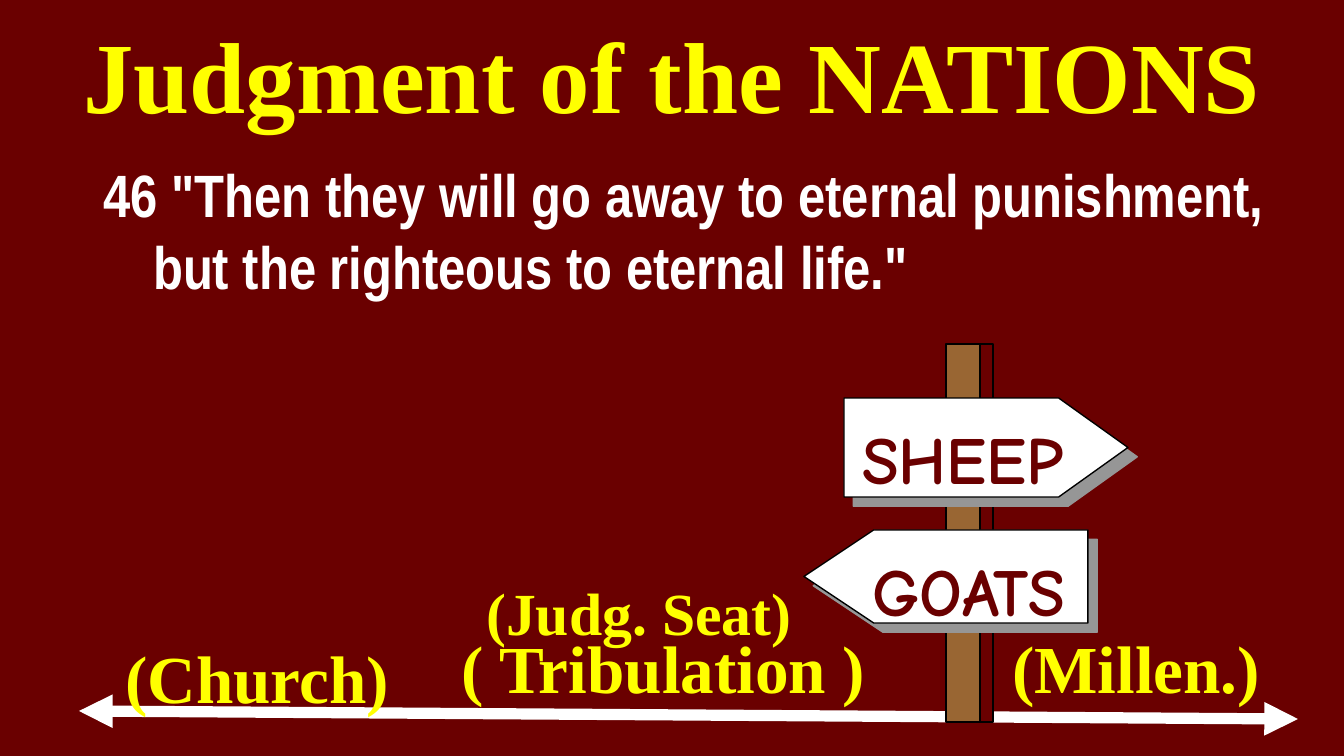
"""Builds the Judgment of the Nations slide."""
from lxml import etree
from pptx import Presentation, util as u
from pptx.dml import color
from pptx.enum import shapes, text
from pptx.oxml import ns

SCALE = 6804
COLORS = {"back": "6A0000", "title": "FFFF00", "white": "FFFFFF",
          "post": "996633", "edge": "000000", "shadow": "969696"}
SERIF, NARROW, COMIC = "Times New Roman", "Arial Narrow", "Comic Neue"


def px(n):
    return u.Emu(n * SCALE)


def rgb(name):
    return color.RGBColor.from_string(COLORS[name])


def add(parent, tag, **attrs):
    return etree.SubElement(parent, ns.qn(tag), attrs)


class Deck:
    def __init__(self, width, height):
        self.prs = Presentation()
        self.prs.slide_width, self.prs.slide_height = px(width), px(height)
        self.s = self.prs.slides.add_slide(self.prs.slide_layouts[6])
        fill = self.s.background.fill
        fill.solid()
        fill.fore_color.rgb = rgb("back")

    def label(self, words, box, size, name=SERIF, ink="title", align="LEFT",
              anchor="TOP", wrap=True, hang=0):
        tf = self.s.shapes.add_textbox(*map(px, box)).text_frame
        frame = {"word_wrap": wrap, "vertical_anchor": getattr(text.MSO_ANCHOR, anchor)}
        for key, value in frame.items():
            setattr(tf, key, value)
        p = tf.paragraphs[0]
        p.alignment = getattr(text.PP_ALIGN, align)
        if hang:
            pPr = p._p.get_or_add_pPr()
            pPr.set("marL", str(px(hang)))
            pPr.set("indent", str(-px(hang)))
        r = p.add_run()
        r.text = words
        for key, value in {"name": name, "size": u.Pt(size), "bold": True}.items():
            setattr(r.font, key, value)
        r.font.color.rgb = rgb(ink)

    def shape(self, kind, box, fill):
        sp = self.s.shapes.add_shape(kind, *map(px, box))
        sp.shadow.inherit = False
        sp.fill.solid()
        sp.fill.fore_color.rgb = rgb(fill)
        sp.line.color.rgb = rgb("edge")
        sp.line.width = u.Pt(0.75)
        return sp

    def sign(self, box, point, left=False):
        sp = self.shape(shapes.MSO_SHAPE.PENTAGON, box, "white")
        sp.adjustments[0] = point
        spPr = sp._element.spPr
        if left:
            spPr.find(ns.qn("a:xfrm")).set("flipH", "1")
        shadow = add(spPr.find(ns.qn("a:effectLst")), "a:outerShdw",
                     dist=str(u.Pt(7.1)), dir="2700000", algn="ctr", rotWithShape="0")
        add(shadow, "a:srgbClr", val=COLORS["shadow"])

    def arrow(self, x1, y1, x2, y2, width):
        sp = self.s.shapes.add_connector(shapes.MSO_CONNECTOR.STRAIGHT,
                                         *map(px, (x1, y1, x2, y2)))
        sp.line.color.rgb = rgb("white")
        sp.line.width = u.Pt(width)
        for end in ("a:headEnd", "a:tailEnd"):
            add(sp.line._ln, end, type="triangle")
        add(sp._element.spPr, "a:effectLst")


def main():
    deck = Deck(1344, 756)
    deck.label("Judgment of the NATIONS", (34, 14, 1276, 118), 54,
               align="CENTER", anchor="MIDDLE")
    deck.label('46 "Then they will go away to eternal punishment, '
               'but the righteous to eternal life."', (90, 151, 1220, 571), 32,
               name=NARROW, ink="white", hang=50)
    deck.arrow(79, 711, 1298, 719, 6)
    deck.label("(Judg. Seat)", (473, 569, 504, 86), 32)

    for x, width, fill in ((946, 34, "post"), (980, 13, "back")):
        deck.shape(shapes.MSO_SHAPE.RECTANGLE, (x, 344, width, 378), fill)
    deck.sign((844, 398, 284, 99), 0.7)
    deck.sign((804, 530, 284, 93), 0.75, left=True)
    for words, x, y in (("GOATS", 829, 543), ("SHEEP", 823, 411)):
        deck.label(words, (x, y, 280, 73), 36, name=COMIC, ink="back",
                   align="CENTER", wrap=False)

    for words, x, y, width, wrap in (("( Tribulation )", 448, 620, 504, True),
                                     ("(Millen.)", 999, 620, 278, False),
                                     ("(Church)", 112, 630, 293, False)):
        deck.label(words, (x, y, width, 95), 36, wrap=wrap)
    deck.prs.save("out.pptx")


if __name__ == "__main__":
    main()
